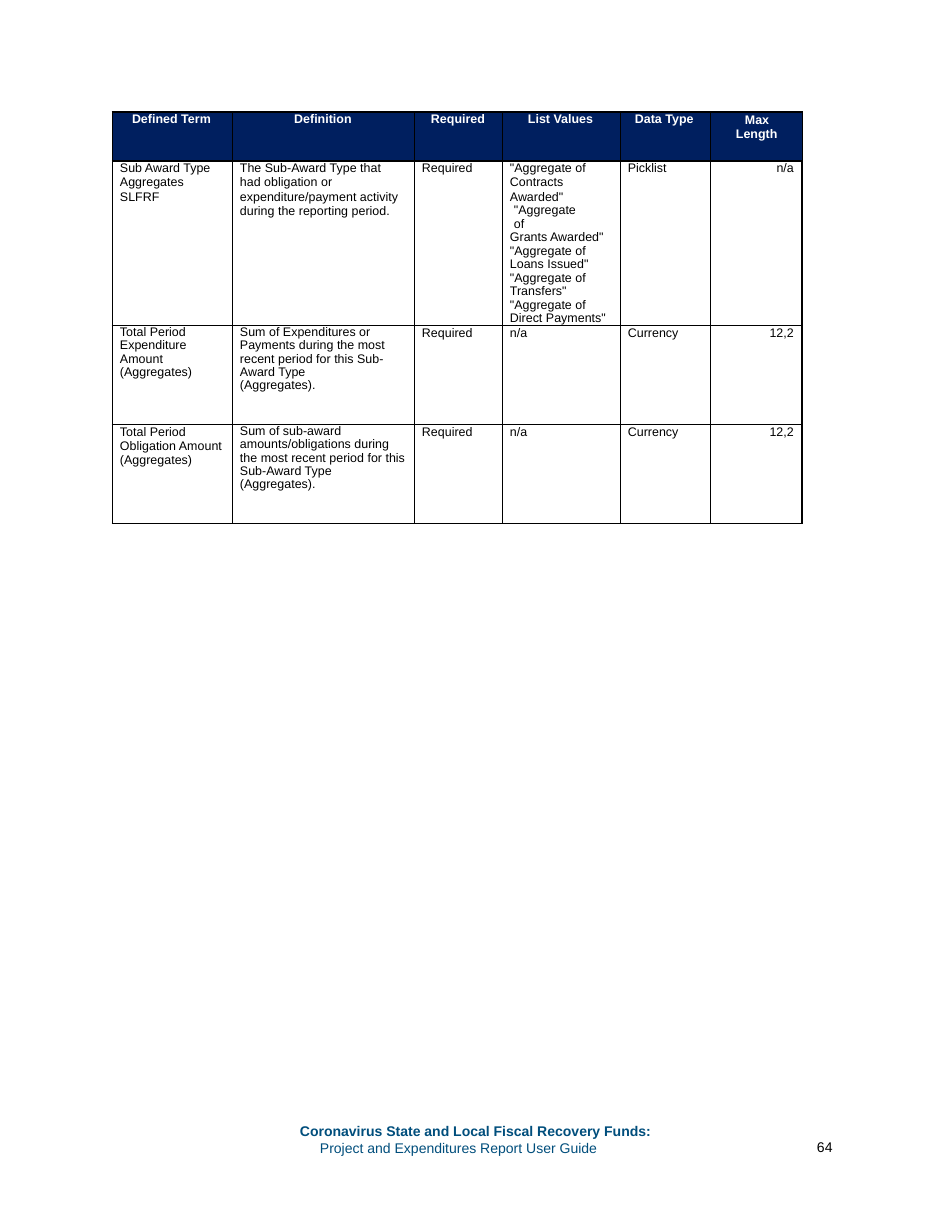
import dataclasses

import lxml.etree
import pptx
import pptx.dml.color
import pptx.enum.text
import pptx.oxml.ns
import pptx.util

PX = 914400 // 112
ALIGN = pptx.enum.text.PP_ALIGN


@dataclasses.dataclass(frozen=True)
class Theme:
    font: str = "Arial"
    navy: str = "001F5F"
    blue: str = "004E7C"
    white: str = "FFFFFF"
    black: str = "000000"
    table_size: int = 8
    footer_size: int = 9
    thin: float = 0.5
    medium: float = 1
    thick: float = 1.5


THEME = Theme()
COLUMNS = [120, 182, 88, 118, 90, 92]
ROWS = [49, 158, 99, 99]
HEADERS = [
    ("Defined Term", 20),
    ("Definition", None),
    ("Required", 17),
    ("List Values", 26),
    ("Data Type", 15),
    ("Max\vLength", 26),
]
LIST_VALUES = [
    ('"Aggregate of\vContracts\vAwarded"', 8, 9.2),
    ('"Aggregate\vof', 12, 8.8),
    ('Grants Awarded"\v"Aggregate of\vLoans Issued"\v"Aggregate of\v'
     'Transfers"\v"Aggregate of\vDirect Payments"', 8, 0.96),
]
BODY = [
    [
        [("Sub Award Type\vAggregates\vSLFRF", 8, 9.2)],
        [("The Sub-Award Type that\vhad obligation or\vexpenditure/payment activity", 8, 9.2),
         ("during the reporting period.", 8, 8.9)],
        "Required", LIST_VALUES, "Picklist", "n/a",
    ],
    [
        [("Total Period\vExpenditure\vAmount\v(Aggregates)", 8, 0.96)],
        [("Sum of Expenditures or\vPayments during the most\vrecent period for this Sub-\v"
          "Award Type\v(Aggregates).", 8, 0.96)],
        "Required", "n/a", "Currency", "12,2",
    ],
    [
        [("Total Period\vObligation Amount\v(Aggregates)", 8, 9.2)],
        [("Sum of sub-award\vamounts/obligations during\vthe most recent period for this\v"
          "Sub-Award Type\v(Aggregates).", 8, 0.96)],
        "Required", "n/a", "Currency", "12,2",
    ],
]


def px(n):
    return n * PX


def rgb(color):
    return pptx.dml.color.RGBColor.from_string(color)


def write(p, text, size, color, bold=False, align=ALIGN.LEFT, spacing=None, indent=0, first=0):
    p.text = text
    p.alignment = align
    if spacing:
        p.line_spacing = spacing if spacing < 2 else pptx.util.Pt(spacing)
    pPr = p._p.get_or_add_pPr()
    pPr.set("marL", str(px(indent)))
    pPr.set("indent", str(px(first)))
    p.font.name = THEME.font
    p.font.size = pptx.util.Pt(size)
    p.font.bold = bold
    p.font.color.rgb = rgb(color)


def set_borders(cell, left, top, right, bottom):
    tcPr = cell._tc.get_or_add_tcPr()
    for i, (side, width) in enumerate(zip("LRTB", (left, right, top, bottom))):
        ln = lxml.etree.Element(pptx.oxml.ns.qn(f"a:ln{side}"), w=str(pptx.util.Pt(width)))
        fill = lxml.etree.SubElement(ln, pptx.oxml.ns.qn("a:solidFill"))
        lxml.etree.SubElement(fill, pptx.oxml.ns.qn("a:srgbClr"), val=THEME.black)
        tcPr.insert(i, ln)


def fill_header(cell, text, indent):
    cell.fill.solid()
    cell.fill.fore_color.rgb = rgb(THEME.navy)
    two_lines = "\v" in text
    cell.margin_top = px(1 if two_lines else 0)
    write(cell.text_frame.paragraphs[0], text, THEME.table_size, THEME.white, True,
          align=ALIGN.CENTER if indent is None else ALIGN.LEFT,
          spacing=9.2 if two_lines else None,
          indent=indent or 0, first=9 if two_lines else 0)


def fill_body(cell, content, align, spacing):
    cell.fill.background()
    tf = cell.text_frame
    parts = [(content, 8, spacing)] if isinstance(content, str) else content
    for i, (text, indent, line) in enumerate(parts):
        p = tf.add_paragraph() if i else tf.paragraphs[0]
        write(p, text, THEME.table_size, THEME.black, align=align, spacing=line,
              indent=indent if align == ALIGN.LEFT else 0)


def add_terms_table(s):
    frame = s.shapes.add_table(len(ROWS), len(COLUMNS), px(112), px(112),
                               px(sum(COLUMNS)), px(sum(ROWS)))
    table = frame.table
    table.horz_banding = False
    for column, width in zip(table.columns, COLUMNS):
        column.width = px(width)
    for row, height in zip(table.rows, ROWS):
        row.height = px(height)
    last = len(COLUMNS) - 1
    for r in range(len(ROWS)):
        for c in range(len(COLUMNS)):
            cell = table.cell(r, c)
            cell.margin_left = cell.margin_top = cell.margin_bottom = 0
            cell.margin_right = px(8 if r and c == last else 0)
            if r == 0:
                fill_header(cell, *HEADERS[c])
            else:
                fill_body(cell, BODY[r - 1][c], ALIGN.RIGHT if c == last else ALIGN.LEFT,
                          9.2 if r == 1 else 9.3)
            set_borders(cell, THEME.thin,
                        (THEME.medium, THEME.thick, THEME.thin, THEME.thin)[r],
                        THEME.medium if r and c == last else THEME.thin,
                        THEME.thin if r else THEME.thick)


def add_footer(s, left, top, width, height, lines, color, spacing=None):
    tf = s.shapes.add_textbox(px(left), px(top), px(width), px(height)).text_frame
    tf.word_wrap = True
    tf.margin_left = tf.margin_top = tf.margin_right = tf.margin_bottom = 0
    for i, (text, indent, bold) in enumerate(lines):
        p = tf.add_paragraph() if i else tf.paragraphs[0]
        write(p, text, THEME.footer_size, color, bold, spacing=spacing, indent=indent)


def main():
    prs = pptx.Presentation()
    prs.slide_width = pptx.util.Inches(8.5)
    prs.slide_height = pptx.util.Inches(11)
    s = prs.slides.add_slide(prs.slide_layouts[6])
    add_terms_table(s)
    add_footer(s, 299, 1123, 354, 35, [
        ("Coronavirus State and Local Fiscal Recovery Funds:", 1, True),
        ("Project and Expenditures Report User Guide", 21, False),
    ], THEME.blue, 10.6)
    add_footer(s, 813, 1139, 25, 19, [("64", 4, False)], THEME.black)
    prs.save("out.pptx")


if __name__ == "__main__":
    main()
